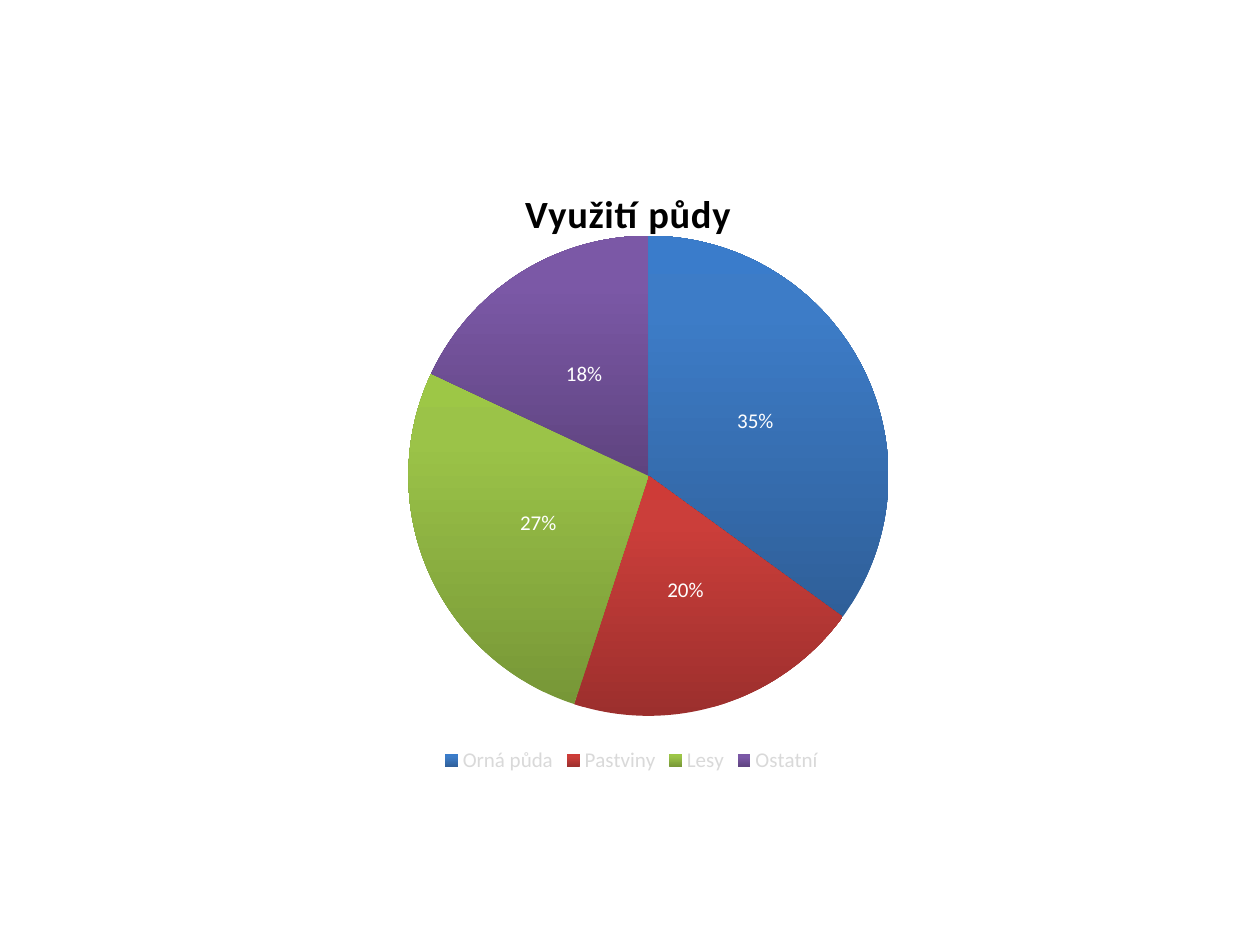
"""Build a slide with a pie chart of land use."""
from lxml import etree
from pptx import Presentation
from pptx.chart.data import CategoryChartData
from pptx.dml.color import RGBColor
from pptx.enum.chart import XL_CHART_TYPE, XL_LABEL_POSITION, XL_LEGEND_POSITION
from pptx.oxml import parse_xml
from pptx.oxml.ns import nsdecls, qn
from pptx.util import Cm, Pt

PIE = XL_CHART_TYPE.PIE
CENTER = XL_LABEL_POSITION.CENTER
BOTTOM = XL_LEGEND_POSITION.BOTTOM

FONT = "Calibri"
BLACK = RGBColor(0x00, 0x00, 0x00)
WHITE = RGBColor(0xFF, 0xFF, 0xFF)
LIGHT_GRAY = RGBColor(0xD9, 0xD9, 0xD9)

TITLE = "Využití půdy"
LAND_USE = [
    ("Orná půda", 35, (RGBColor(0x2F, 0x5F, 0x99), RGBColor(0x3D, 0x7C, 0xC7), RGBColor(0x3A, 0x7C, 0xCB))),
    ("Pastviny", 20, (RGBColor(0x9C, 0x2F, 0x2D), RGBColor(0xCB, 0x3E, 0x3A), RGBColor(0xCE, 0x3B, 0x37))),
    ("Lesy", 27, (RGBColor(0x77, 0x97, 0x37), RGBColor(0x9B, 0xC3, 0x48), RGBColor(0x9D, 0xC7, 0x46))),
    ("Ostatní", 18, (RGBColor(0x5F, 0x44, 0x80), RGBColor(0x7B, 0x58, 0xA6), RGBColor(0x7C, 0x57, 0xA8))),
]
STOPS = (0, 80, 100)
PLOT_LAYOUT = {"x": 0.3, "y": 0.13, "w": 0.43, "h": 0.77}
TITLE_LAYOUT = {"x": 0.4, "y": 0.04}


def set_font(font, size, color, bold=False):
    font.name, font.size, font.bold = FONT, Pt(size), bold
    font.color.rgb = color


def set_gradient(point, colors):
    stops = "".join(
        f'<a:gs pos="{pos * 1000}"><a:srgbClr val="{color}"/></a:gs>'
        for pos, color in zip(STOPS, colors)
    )
    point.format.fill.background()
    sp_pr = point.format.fill._xPr
    old = sp_pr.find(qn("a:noFill"))
    sp_pr.replace(old, parse_xml(
        f'<a:gradFill {nsdecls("a")} rotWithShape="1"><a:gsLst>{stops}</a:gsLst>'
        '<a:lin ang="16200000" scaled="0"/></a:gradFill>'
    ))
    point.format.line.fill.background()


def set_layout(parent, position, inner=False):
    for old in parent.findall(qn("c:layout")):
        parent.remove(old)
    layout = etree.Element(qn("c:layout"))
    manual = etree.SubElement(layout, qn("c:manualLayout"))
    if inner:
        etree.SubElement(manual, qn("c:layoutTarget"), val="inner")
    for key in ("x", "y"):
        etree.SubElement(manual, qn(f"c:{key}Mode"), val="edge")
    for key, value in position.items():
        etree.SubElement(manual, qn(f"c:{key}"), val=str(value))
    text = parent.find(qn("c:tx"))
    parent.insert(0 if text is None else parent.index(text) + 1, layout)


def add_land_use_chart(slide):
    data = CategoryChartData()
    data.categories = [name for name, _, _ in LAND_USE]
    data.add_series("Series 1", [share for _, share, _ in LAND_USE])
    chart = slide.shapes.add_chart(PIE, Cm(1.3), Cm(3.12), Cm(22.86), Cm(12.57), data).chart
    set_font(chart.font, 10, BLACK)

    chart.has_title = True
    r = chart.chart_title.text_frame.paragraphs[0].add_run()
    r.text = TITLE
    set_font(r.font, 22, BLACK, bold=True)
    r.font._element.set("spc", "50")
    chart.chart_title.include_in_layout = False

    chart.has_legend = True
    chart.legend.position = BOTTOM
    chart.legend.include_in_layout = False
    set_font(chart.legend.font, 12, LIGHT_GRAY)

    plot = chart.plots[0]
    plot.vary_by_categories = True
    plot.has_data_labels = True
    labels = plot.data_labels
    labels.show_percentage = True
    labels.show_value = False
    labels.number_format = "0%"
    labels.number_format_is_linked = False
    labels.position = CENTER
    set_font(labels.font, 12, WHITE)
    for i, (_, _, colors) in enumerate(LAND_USE):
        set_gradient(plot.series[0].points[i], colors)

    set_layout(chart.chart_title._element, TITLE_LAYOUT)
    set_layout(chart._chartSpace.chart.plotArea, PLOT_LAYOUT, inner=True)


def main():
    prs = Presentation()
    prs.slide_width, prs.slide_height = Cm(25.4), Cm(19.05)
    slide = prs.slides.add_slide(prs.slide_layouts[6])
    add_land_use_chart(slide)
    prs.save("out.pptx")


if __name__ == "__main__":
    main()
